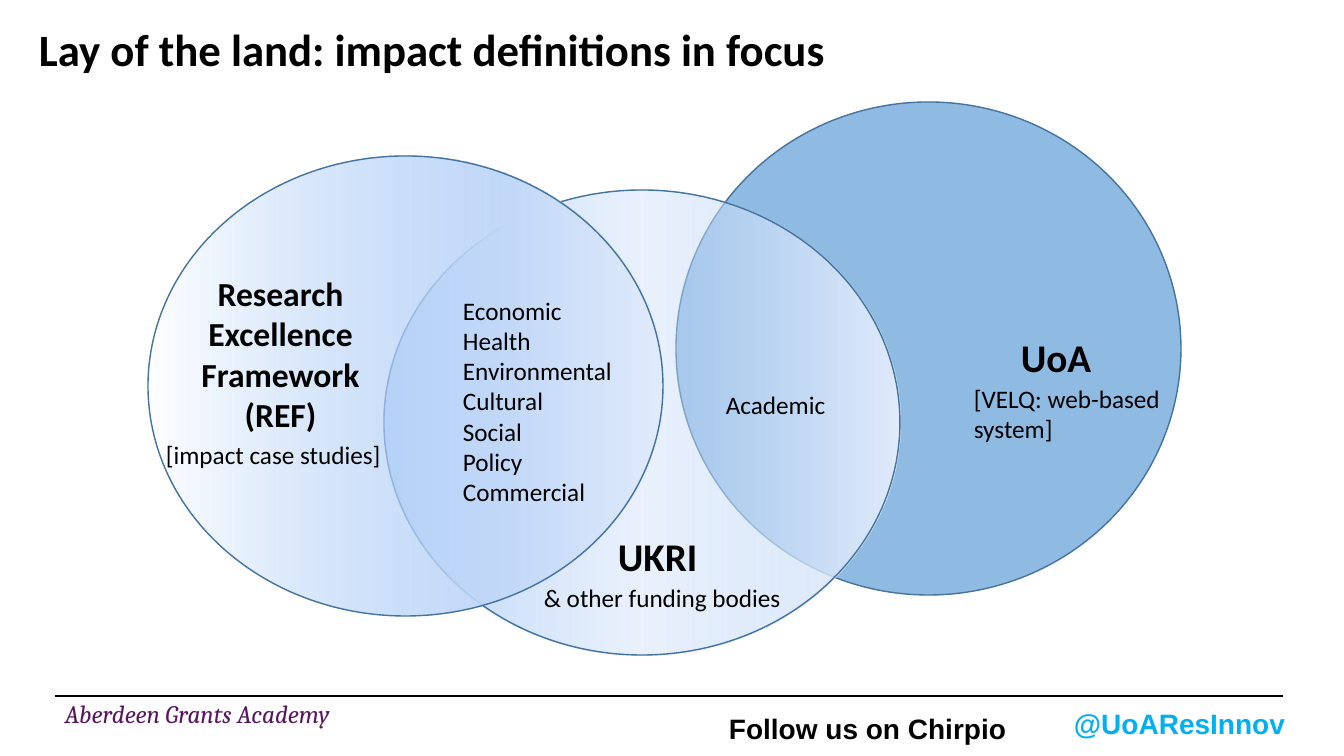
from lxml.etree import SubElement
from pptx import Presentation
from pptx.dml.color import RGBColor
from pptx.enum.shapes import MSO_CONNECTOR, MSO_SHAPE
from pptx.enum.text import MSO_ANCHOR, PP_ALIGN
from pptx.oxml.ns import qn
from pptx.util import Pt

EMU_PER_PX = 914400 / 100.8
SLIDE_SIZE = (1344, 756)

COLORS = {
    "black": "000000",
    "outline": "43739E",
    "blue": "5B9BD5",
    "deep": "9AC3F5",
    "middle": "C2D8F8",
    "pale": "E1EBFB",
    "handle": "00B0F0",
    "academy": "59155F",
}

# Box in px, then stops: position %, colour, opacity %. One stop is a plain fill.
CIRCLES = [
    ((676, 102, 505, 493), [(0, "blue", 68)]),
    ((384, 190, 516, 465), [(0, "deep", 74), (50, "middle", 34), (100, "pale", 100)]),
    ((148, 156, 515, 460), [(0, "deep", 0), (70, "middle", 100), (100, "pale", 100)]),
]

IMPACT_TYPES = ["Economic", "Health", "Environmental", "Cultural", "Social", "Policy", "Commercial"]

STYLES = {
    "title": dict(size=32, bold=True),
    "circle": dict(size=28, bold=True),
    "framework": dict(size=24, bold=True, align=PP_ALIGN.CENTER),
    "detail": dict(size=18),
    "follow": dict(size=20, bold=True, font="Arial", anchor=MSO_ANCHOR.MIDDLE),
    "handle": dict(size=20, bold=True, font="Arial", color="handle", anchor=MSO_ANCHOR.MIDDLE),
    "academy": dict(size=18, italic=True, font="Cambria", color="academy", spacing=0.9),
}

TEXTS = [
    ("framework", (155, 268, 251, 173), ["Research Excellence Framework (REF)"]),
    ("circle", (1011, 328, 194, 57), ["UoA"]),
    ("circle", (608, 527, 194, 57), ["UKRI"]),
    ("detail", (453, 290, 251, 224), IMPACT_TYPES),
    ("detail", (716, 384, 138, 40), ["Academic"]),
    ("detail", (156, 434, 240, 40), ["[impact case studies]"]),
    ("detail", (534, 577, 284, 40), ["& other funding bodies"]),
    ("detail", (964, 378, 217, 72), ["[VELQ: web-based system]"]),
    ("title", (29, 17, 833, 65), ["Lay of the land: impact definitions in focus"]),
    ("handle", (1064, 701, 272, 44), ["@UoAResInnov"]),
    ("follow", (719, 706, 330, 44), ["Follow us on Chirpio"]),
    ("academy", (55, 697, 650, 38), ["Aberdeen Grants Academy"]),
]

FOOTER_RULE = (55, 696, 1283, 696)


def emu(lengths):
    return [round(length * EMU_PER_PX) for length in lengths]


def rgb(name):
    return RGBColor.from_string(COLORS[name])


def add_color(parent, name, opacity):
    color = SubElement(parent, qn("a:srgbClr"), val=COLORS[name])
    SubElement(color, qn("a:alpha"), val=str(opacity * 1000))


def add_circle(slide, box, stops):
    circle = slide.shapes.add_shape(MSO_SHAPE.OVAL, *emu(box))
    circle.shadow.inherit = False
    circle.line.color.rgb = rgb("outline")
    circle.line.width = Pt(1)
    properties = circle._element.spPr
    if len(stops) == 1:
        circle.fill.solid()
        circle.fill.fore_color.rgb = rgb(stops[0][1])
        fill = properties.find(qn("a:solidFill"))
        fill.remove(fill[0])
        add_color(fill, *stops[0][1:])
        return
    circle.fill.gradient()
    circle.fill.gradient_angle = 0
    stop_list = properties.find(qn("a:gradFill")).find(qn("a:gsLst"))
    for old_stop in list(stop_list):
        stop_list.remove(old_stop)
    for position, name, opacity in stops:
        stop = SubElement(stop_list, qn("a:gs"), pos=str(position * 1000))
        add_color(stop, name, opacity)


def add_text(slide, box, lines, size, bold=False, italic=False, font="Calibri", color="black",
             align=PP_ALIGN.LEFT, anchor=MSO_ANCHOR.TOP, spacing=None):
    frame = slide.shapes.add_textbox(*emu(box)).text_frame
    frame.word_wrap = True
    frame.vertical_anchor = anchor
    frame.text = "\n".join(lines)
    for paragraph in frame.paragraphs:
        paragraph.alignment = align
        paragraph.line_spacing = spacing
        paragraph.font.name = font
        paragraph.font.size = Pt(size)
        paragraph.font.bold = bold
        paragraph.font.italic = italic
        paragraph.font.color.rgb = rgb(color)


def add_rule(slide, ends):
    rule = slide.shapes.add_connector(MSO_CONNECTOR.STRAIGHT, *emu(ends))
    rule.line.color.rgb = rgb("black")
    rule.line.width = Pt(0.75)
    SubElement(rule._element.spPr, qn("a:effectLst"))


def main():
    presentation = Presentation()
    presentation.slide_width, presentation.slide_height = emu(SLIDE_SIZE)
    slide = presentation.slides.add_slide(presentation.slide_layouts[6])
    add_rule(slide, FOOTER_RULE)
    for box, stops in CIRCLES:
        add_circle(slide, box, stops)
    for style, box, lines in TEXTS:
        add_text(slide, box, lines, **STYLES[style])
    presentation.save("out.pptx")


if __name__ == "__main__":
    main()
